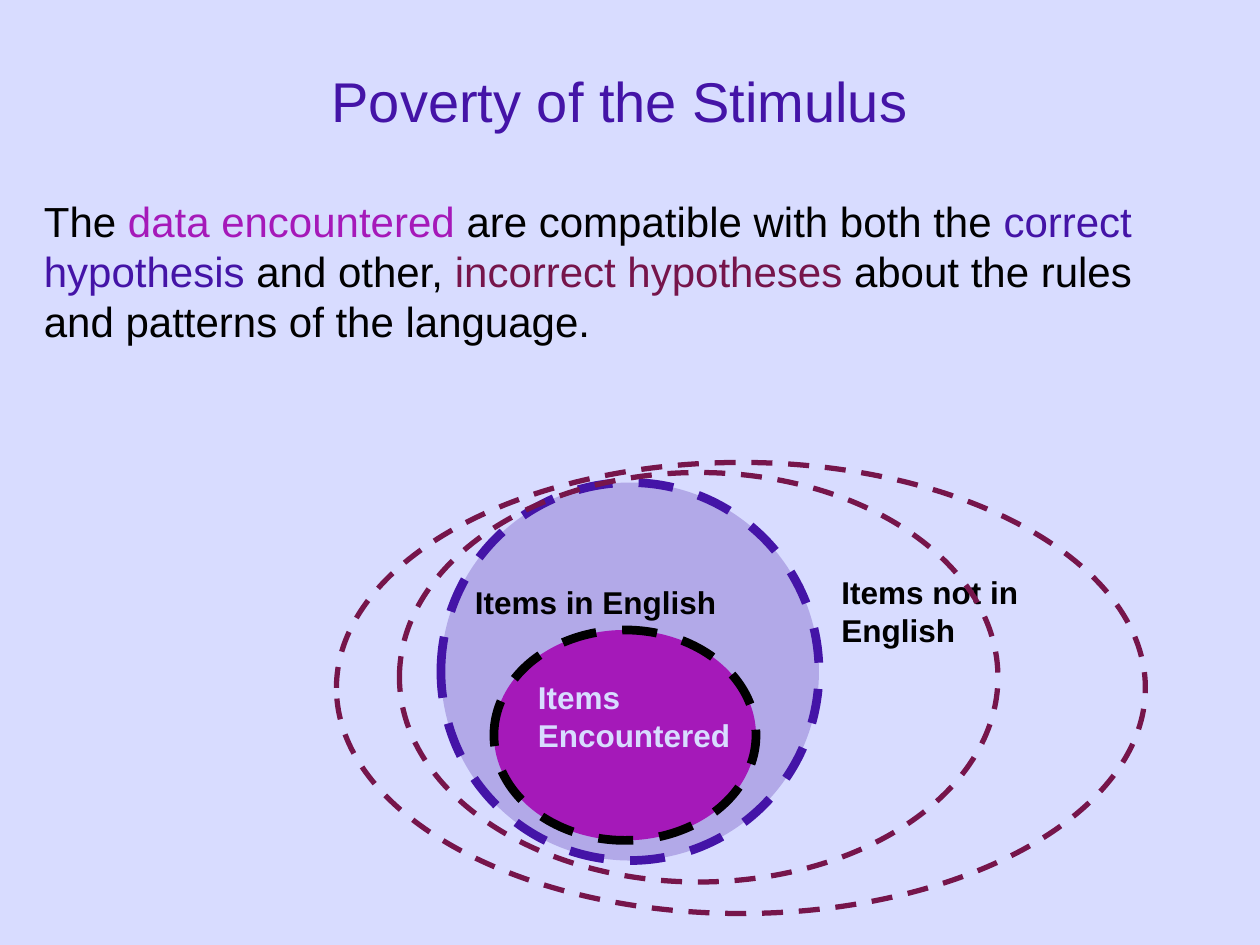
import pptx
import pptx.dml.color
import pptx.enum.dml
import pptx.enum.shapes
import pptx.enum.text
import pptx.oxml.ns
import pptx.util
from lxml import etree

Inches = pptx.util.Inches
RGBColor = pptx.dml.color.RGBColor
Anchor = pptx.enum.text.MSO_ANCHOR
Align = pptx.enum.text.PP_ALIGN

BACKGROUND = RGBColor(0xD8, 0xDC, 0xFF)
INDIGO = RGBColor(0x44, 0x14, 0xA7)
PURPLE = RGBColor(0xA5, 0x19, 0xB9)
MAROON = RGBColor(0x76, 0x15, 0x4B)
BLACK = RGBColor(0, 0, 0)


def apply_format(target, values):
    """Set each attribute named in values on target."""
    for attribute, value in values.items():
        setattr(target, attribute, value)


def add_text(slide, box, runs, size, bold=False, align=Align.LEFT, **frame_format):
    """Place one paragraph of coloured runs in box."""
    frame = slide.shapes.add_textbox(*map(Inches, box)).text_frame
    apply_format(frame, {"word_wrap": True, **frame_format})
    paragraph = frame.paragraphs[0]
    paragraph.alignment = align
    for words, color in runs:
        run = paragraph.add_run()
        run.text = words
        apply_format(run.font, {"name": "Arial", "size": pptx.util.Pt(size), "bold": bold})
        run.font.color.rgb = color


def add_set(slide, box, line_color, line_width, fill_color=None, opacity=100):
    """Draw a dashed ellipse standing for a set of items."""
    ellipse = slide.shapes.add_shape(pptx.enum.shapes.MSO_SHAPE.OVAL, *map(Inches, box))
    ellipse.shadow.inherit = False
    apply_format(ellipse.line, {
        "width": pptx.util.Pt(line_width),
        "dash_style": pptx.enum.dml.MSO_LINE.DASH,
    })
    ellipse.line.color.rgb = line_color
    if fill_color is None:
        ellipse.fill.background()
        return
    ellipse.fill.solid()
    ellipse.fill.fore_color.rgb = fill_color
    if opacity < 100:
        tag = pptx.oxml.ns.qn
        color = ellipse.element.spPr.find(tag("a:solidFill")).find(tag("a:srgbClr"))
        etree.SubElement(color, tag("a:alpha")).set("val", str(opacity * 1000))


def add_title(slide, box):
    """Place the centred slide title."""
    add_text(slide, box, [("Poverty of the Stimulus", INDIGO)], 32,
             align=Align.CENTER, vertical_anchor=Anchor.MIDDLE)


def add_claim(slide, box):
    """Place the statement with its key terms in colour."""
    add_text(slide, box, [
        ("The ", BLACK),
        ("data encountered", PURPLE),
        (" are compatible with both the ", BLACK),
        ("correct hypothesis", INDIGO),
        (" and other, ", BLACK),
        ("incorrect hypotheses", MAROON),
        (" about the rules and patterns of the language.", BLACK),
    ], 24)


def add_hypotheses(slide, box):
    """Draw the nested sets and their labels inside box."""
    left, top, width, height = box

    def within(x, y, w, h):
        return left + x, top + y, w, h

    add_set(slide, within(0, 0, width, height), MAROON, 3)
    add_set(slide, within(0.83, 0.16, 3, 3), INDIGO, 5, INDIGO, 25)
    add_set(slide, within(1.25, 1.33, 2.08, 1.67), BLACK, 5, PURPLE)
    labels = [
        ("Items Encountered", (1.5, 1.66, 1.75, 0.7), BACKGROUND, True),
        ("Items in English", (1, 0.91, 2.12, 0.4), BLACK, False),
        ("Items not in English", (3.91, 0.83, 1.75, 0.7), BLACK, True),
    ]
    for words, place, color, wrap in labels:
        add_text(slide, within(*place), [(words, color)], 18, bold=True, word_wrap=wrap)
    add_set(slide, within(0.5, 0.08, 4.75, 3.25), MAROON, 3)


def main():
    """Build the slide and save it."""
    deck = pptx.Presentation()
    apply_format(deck, {"slide_width": Inches(10), "slide_height": Inches(7.5)})
    slide = deck.slides.add_slide(deck.slide_layouts[6])
    slide.background.fill.solid()
    slide.background.fill.fore_color.rgb = BACKGROUND
    add_title(slide, (0.67, 0.17, 8.5, 1.25))
    add_claim(slide, (0.25, 1.5, 9.42, 1.3))
    add_hypotheses(slide, (2.67, 3.67, 6.42, 3.58))
    deck.save("out.pptx")


if __name__ == "__main__":
    main()
